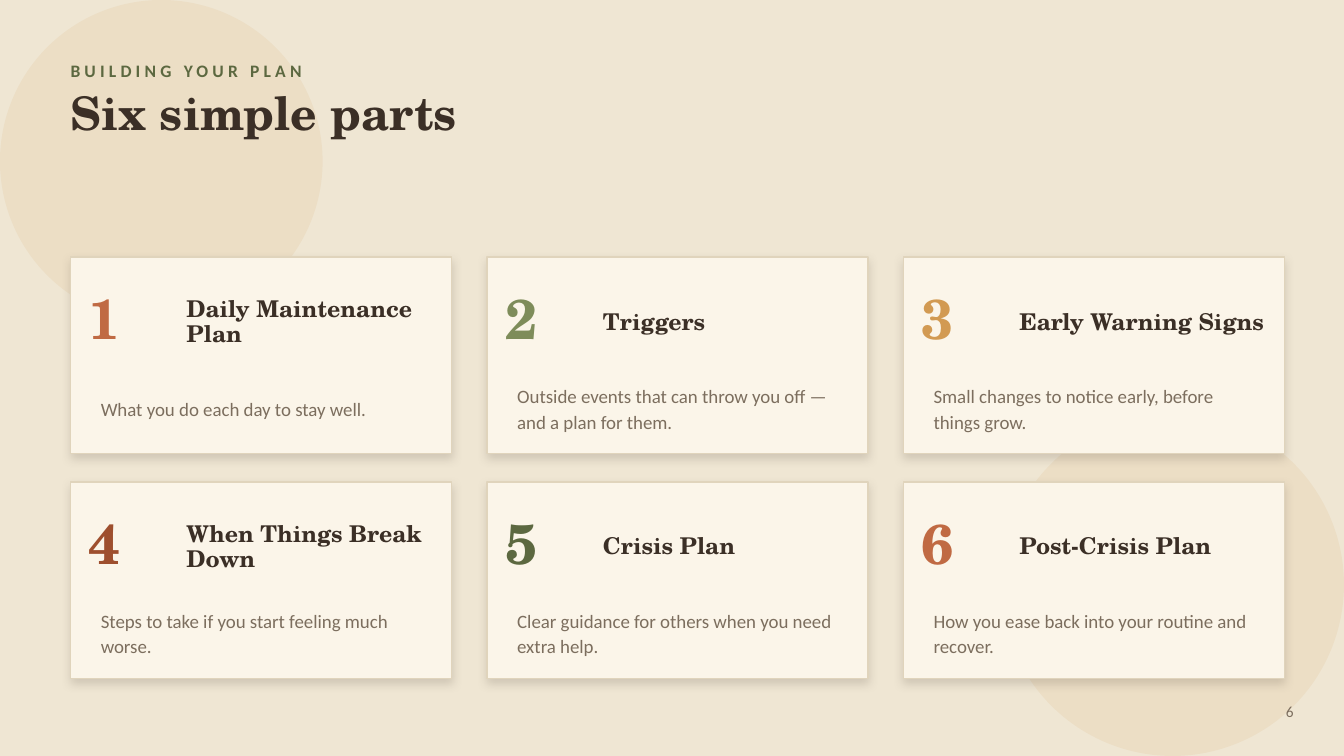
from lxml import etree
from pptx import Presentation
from pptx.dml.color import RGBColor
from pptx.enum.shapes import MSO_SHAPE
from pptx.enum.text import MSO_ANCHOR, PP_ALIGN
from pptx.oxml.ns import qn
from pptx.util import Inches, Pt

OVAL, RECT = MSO_SHAPE.OVAL, MSO_SHAPE.RECTANGLE
TOP, MIDDLE = MSO_ANCHOR.TOP, MSO_ANCHOR.MIDDLE
RIGHT = PP_ALIGN.RIGHT

SLIDE_W, SLIDE_H = 13.33, 7.5
SERIF, SANS = "TeX Gyre Schola", "Calibri"
COLORS = {
    "paper": "EFE6D3", "card": "FBF5E9", "border": "E0D4BC",
    "ink": "3B2F26", "muted": "7C6E5E", "clay": "C06A43",
    "sage": "7E8C5A", "amber": "D29A52", "rust": "9E4F2E", "moss": "5C6840",
}

MARGIN = 0.7
GRID_TOP, COLUMNS = 2.55, 3
CARD_W, CARD_H = 3.78, 1.95
COL_STEP, ROW_STEP = CARD_W + 0.35, CARD_H + 0.28

PARTS = [
    ("Daily Maintenance Plan", "What you do each day to stay well.", "clay"),
    ("Triggers", "Outside events that can throw you off — and a plan for them.", "sage"),
    ("Early Warning Signs", "Small changes to notice early, before things grow.", "amber"),
    ("When Things Break Down", "Steps to take if you start feeling much worse.", "rust"),
    ("Crisis Plan", "Clear guidance for others when you need extra help.", "moss"),
    ("Post-Crisis Plan", "How you ease back into your routine and recover.", "clay"),
]


def rgb(name):
    return RGBColor.from_string(COLORS[name])


def add_filled(slide, kind, x, y, w, h, color):
    sp = slide.shapes.add_shape(kind, Inches(x), Inches(y), Inches(w), Inches(h))
    sp.shadow.inherit = False
    sp.fill.solid()
    sp.fill.fore_color.rgb = rgb(color)
    return sp


def set_alpha(color_element, percent):
    etree.SubElement(color_element, qn("a:alpha"), val=str(percent * 1000))


def add_glow_circle(slide, x, y, size):
    sp = add_filled(slide, OVAL, x, y, size, size, "amber")
    sp.line.fill.background()
    set_alpha(sp._element.spPr.find(".//" + qn("a:srgbClr")), 10)


def add_soft_shadow(sp):
    effects = sp._element.spPr.find(qn("a:effectLst"))
    shadow = etree.SubElement(
        effects, qn("a:outerShdw"), blurRad=str(Pt(7)), dist=str(Pt(3)),
        dir=str(90 * 60000), algn="ctr", rotWithShape="0")
    set_alpha(etree.SubElement(shadow, qn("a:srgbClr"), val=COLORS["ink"]), 16)


def add_text(slide, x, y, w, h, text, size, color, font=SANS, bold=False,
             anchor=MIDDLE, leading=None, tracking=None):
    """Add one paragraph in a box without insets; return its text frame."""
    sp = slide.shapes.add_textbox(Inches(x), Inches(y), Inches(w), Inches(h))
    tf = sp.text_frame
    tf.word_wrap = True
    tf.vertical_anchor = anchor
    tf.margin_left = tf.margin_right = tf.margin_top = tf.margin_bottom = 0
    p = tf.paragraphs[0]
    if leading:
        p.line_spacing = Pt(leading)
    r = p.add_run()
    r.text = text
    r.font.name, r.font.size, r.font.bold = font, Pt(size), bold
    r.font.color.rgb = rgb(color)
    if tracking:
        r.font._element.set("spc", str(tracking * 100))
    return tf


def add_card(slide, index, title, description, accent):
    row, col = divmod(index, COLUMNS)
    x, y = MARGIN + col * COL_STEP, GRID_TOP + row * ROW_STEP
    sp = add_filled(slide, RECT, x, y, CARD_W, CARD_H, "card")
    sp.line.color.rgb = rgb("border")
    sp.line.width = Pt(1)
    add_soft_shadow(sp)
    add_text(slide, x + 0.18, y + 0.12, 0.95, 0.95, str(index + 1), 40, accent,
             SERIF, bold=True)
    add_text(slide, x + 1.15, y + 0.22, 2.43, 0.85, title, 16.5, "ink",
             SERIF, bold=True, leading=18)
    add_text(slide, x + 0.3, y + 1.12, 3.23, 0.75, description, 13.5, "muted",
             leading=18)


def add_page_number(slide, number):
    tf = add_text(slide, SLIDE_W - 0.9, 6.88, 0.5, 0.35, number, 11, "muted")
    tf.margin_left = tf.margin_right = Inches(0.1)
    tf.margin_top = tf.margin_bottom = Inches(0.05)
    tf.paragraphs[0].alignment = RIGHT


def main():
    prs = Presentation()
    prs.slide_width, prs.slide_height = Inches(SLIDE_W), Inches(SLIDE_H)
    slide = prs.slides.add_slide(prs.slide_layouts[6])
    slide.background.fill.solid()
    slide.background.fill.fore_color.rgb = rgb("paper")

    add_glow_circle(slide, 0, 0, 3.2)
    add_glow_circle(slide, SLIDE_W - 3.4, SLIDE_H - 3.4, 3.4)
    add_text(slide, MARGIN, 0.5, 9, 0.4, "BUILDING YOUR PLAN", 12.5, "moss",
             bold=True, tracking=3)
    add_text(slide, MARGIN, 0.84, 11.9, 1, "Six simple parts", 33, "ink",
             SERIF, bold=True, anchor=TOP)
    for index, part in enumerate(PARTS):
        add_card(slide, index, *part)
    add_page_number(slide, "6")
    prs.save("out.pptx")


if __name__ == "__main__":
    main()
